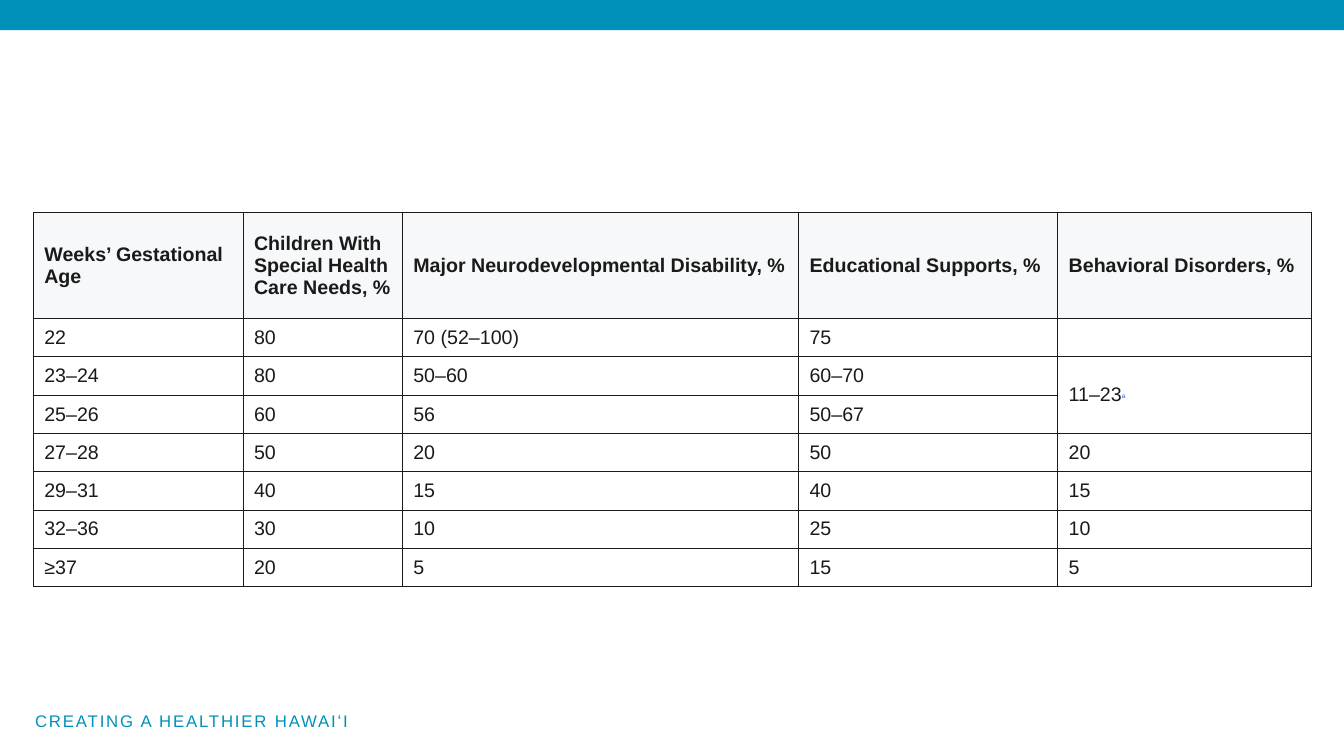
from lxml.etree import SubElement
from pptx import Presentation
from pptx.dml.color import RGBColor
from pptx.enum.shapes import MSO_SHAPE as Shape
from pptx.enum.text import MSO_ANCHOR as Anchor
from pptx.oxml.ns import qn
from pptx.util import Inches, Pt

BLUE = RGBColor(0x00, 0x91, 0xBA)
INK = RGBColor(0x1A, 0x1A, 0x1A)
LINK = RGBColor(0x30, 0x4F, 0xFE)
PALE = RGBColor(0xF6, 0xF8, 0xF9)
WHITE = RGBColor(0xFF, 0xFF, 0xFF)

MOTTO = "CREATING A HEALTHIER HAWAIʻI"
HEADS = (
    "Weeks’ Gestational Age",
    "Children With Special Health Care Needs, %",
    "Major Neurodevelopmental Disability, %",
    "Educational Supports, %",
    "Behavioral Disorders, %",
)
ROWS = [
    HEADS,
    ("22", "80", "70 (52–100)", "75", ""),
    ("23–24", "80", "50–60", "60–70", "11–23"),
    ("25–26", "60", "56", "50–67", ""),
    ("27–28", "50", "20", "50", "20"),
    ("29–31", "40", "15", "40", "15"),
    ("32–36", "30", "10", "25", "10"),
    ("≥37", "20", "5", "15", "5"),
]
WIDTHS = (2.08, 1.58, 3.93, 2.57, 2.52)
HEAD_H, ROW_H = 1.05, 0.38
SPAN = (2, 3)  # rows that share one behavior figure
NOTE = "a"


def put(para, text, size=14, color=INK, bold=False, gap=None, raised=None):
    """Add a run; an empty text only sets the size of the empty line."""
    if not text:
        SubElement(para._p, qn("a:endParaRPr")).set("sz", str(size * 100))
        return
    run = para.add_run()
    run.text = text
    font = run.font
    font.name, font.size, font.bold = "Arial", Pt(size), bold
    font.color.rgb = color
    props = run._r.get_or_add_rPr()
    if gap:
        props.set("spc", str(round(gap * 100)))
    if raised:
        props.set("baseline", str(raised * 1000))


def frame(cell):
    """Draw a thin dark line on all four sides of a cell."""
    props = cell._tc.get_or_add_tcPr()
    for side in ("lnL", "lnR", "lnT", "lnB"):
        line = SubElement(props, qn(f"a:{side}"), w=str(Pt(0.75)))
        fill = SubElement(line, qn("a:solidFill"))
        SubElement(fill, qn("a:srgbClr"), val=str(INK))


def add_grid(slide):
    high = HEAD_H + ROW_H * (len(ROWS) - 1)
    grid = slide.shapes.add_table(
        len(ROWS), len(WIDTHS), Inches(0.33), Inches(2.11),
        Inches(sum(WIDTHS)), Inches(high)).table
    for col, width in zip(grid.columns, WIDTHS):
        col.width = Inches(width)
    last = len(WIDTHS) - 1
    grid.cell(SPAN[0], last).merge(grid.cell(SPAN[1], last))

    for r, row in enumerate(ROWS):
        head = r == 0
        grid.rows[r].height = Inches(HEAD_H if head else ROW_H)
        for c, text in enumerate(row):
            cell = grid.cell(r, c)
            cell.vertical_anchor = Anchor.MIDDLE
            cell.margin_left = cell.margin_right = Inches(0.11)
            cell.margin_top = cell.margin_bottom = Inches(0.05)
            frame(cell)
            cell.fill.solid()
            cell.fill.fore_color.rgb = PALE if head else WHITE
            put(cell.text_frame.paragraphs[0], text, bold=head)
    shared = grid.cell(SPAN[0], last).text_frame.paragraphs[0]
    put(shared, NOTE, size=8, color=LINK, raised=30)


def main():
    deck = Presentation()
    deck.slide_width, deck.slide_height = Inches(13.33), Inches(7.5)
    slide = deck.slides.add_slide(deck.slide_layouts[6])

    band = slide.shapes.add_shape(
        Shape.RECTANGLE, 0, 0, deck.slide_width, Inches(0.3))
    band.shadow.inherit = False
    band.fill.solid()
    band.fill.fore_color.rgb = BLUE
    band.line.fill.background()

    foot = slide.shapes.add_textbox(
        Inches(0.25), Inches(6.95), Inches(4.03), Inches(0.4)).text_frame
    foot.word_wrap = True
    foot.vertical_anchor = Anchor.MIDDLE
    foot.paragraphs[0].space_after = Pt(6)
    put(foot.paragraphs[0], MOTTO, size=12, color=BLUE, gap=1.3)

    add_grid(slide)
    deck.save("out.pptx")


if __name__ == "__main__":
    main()
